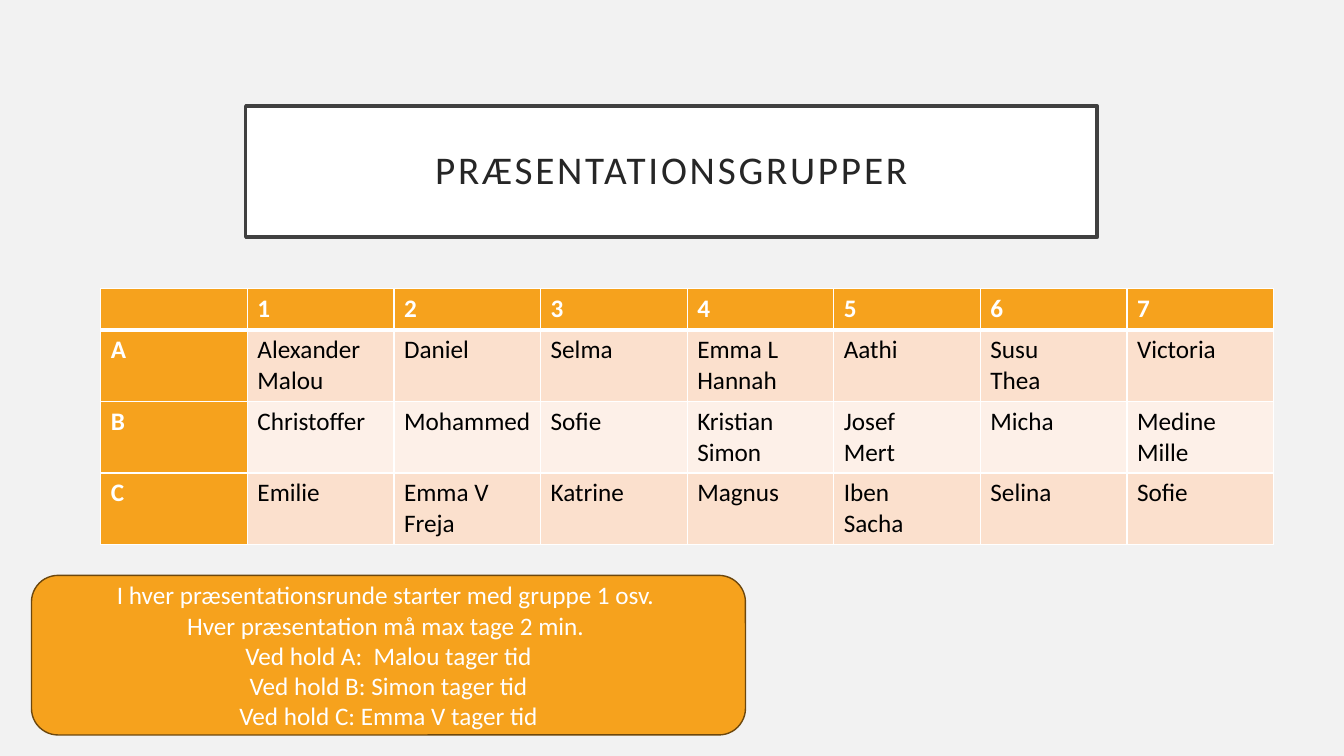
from collections import namedtuple

from lxml.etree import SubElement
from pptx import Presentation
from pptx.dml.color import RGBColor
from pptx.enum.shapes import MSO_SHAPE
from pptx.enum.text import MSO_ANCHOR, MSO_AUTO_SIZE, PP_ALIGN
from pptx.oxml.ns import qn
from pptx.util import Emu, Pt

Box = namedtuple("Box", "left top width height")

FONT = "Calibri"
BACKGROUND = RGBColor(0xF2, 0xF2, 0xF2)
WHITE = RGBColor(0xFF, 0xFF, 0xFF)
BLACK = RGBColor(0x00, 0x00, 0x00)
TITLE_TEXT = RGBColor(0x26, 0x26, 0x26)
TITLE_LINE = RGBColor(0x40, 0x40, 0x40)
ORANGE = RGBColor(0xF6, 0xA2, 0x1D)
NOTE_LINE = RGBColor(0x6C, 0x47, 0x0D)
BANDS = (RGBColor(0xFB, 0xE0, 0xCD), RGBColor(0xFD, 0xF0, 0xE8))

HEADER_HEIGHT = 39
GROUPS = [
    ["", "1", "2", "3", "4", "5", "6", "7"],
    ["A", "Alexander\nMalou", "Daniel", "Selma", "Emma L\nHannah", "Aathi", "Susu\nThea", "Victoria"],
    ["B", "Christoffer", "Mohammed", "Sofie", "Kristian\nSimon", "Josef\nMert", "Micha", "Medine\nMille"],
    ["C", "Emilie", "Emma V\nFreja", "Katrine", "Magnus", "Iben\nSacha", "Selina", "Sofie"],
]
RULES = [
    "I hver præsentationsrunde starter med gruppe 1 osv. ",
    "Hver præsentation må max tage 2 min. ",
    "Ved hold A:  Malou tager tid",
    "Ved hold B: Simon tager tid",
    "Ved hold C: Emma V tager tid",
]


def px(length):
    return Emu(round(length * 9525))


def place(shape, box):
    shape.left, shape.top, shape.width, shape.height = map(px, box)


def paint(shape, fill, line, line_width):
    shape.fill.solid()
    shape.fill.fore_color.rgb = fill
    shape.line.color.rgb = line
    shape.line.width = Pt(line_width)


def write_lines(text_frame, lines, color, size=18, bold=False, alignment=PP_ALIGN.LEFT):
    """Write each line as a paragraph with one run."""
    for index, line in enumerate(lines):
        paragraph = text_frame.add_paragraph() if index else text_frame.paragraphs[0]
        paragraph.alignment = alignment
        run = paragraph.add_run()
        run.text = line
        run.font.name = FONT
        run.font.size = Pt(size)
        run.font.bold = bold
        run.font.color.rgb = color


def add_title(slide, box):
    title = slide.shapes.title
    place(title, box)
    paint(title, WHITE, TITLE_LINE, 2.5)
    frame = title.text_frame
    frame.word_wrap = True
    frame.auto_size = MSO_AUTO_SIZE.NONE
    frame.vertical_anchor = MSO_ANCHOR.MIDDLE
    frame.margin_left = frame.margin_right = frame.margin_top = frame.margin_bottom = px(19)
    write_lines(frame, ["PRÆSENTATIONSGRUPPER"], TITLE_TEXT, 28, alignment=PP_ALIGN.CENTER)
    paragraph = frame.paragraphs[0]
    paragraph.line_spacing = 0.9
    paragraph.runs[0].font._element.set("spc", "200")


def add_cell_borders(cell, top, bottom):
    """Draw white borders, with the top and bottom widths given in points."""
    properties = cell._tc.get_or_add_tcPr()
    for side, width in (("L", 1), ("R", 1), ("T", top), ("B", bottom)):
        line = SubElement(properties, qn(f"a:ln{side}"), w=str(Pt(width)))
        fill = SubElement(line, qn("a:solidFill"))
        SubElement(fill, qn("a:srgbClr"), val=str(WHITE))


def add_group_table(slide, box):
    row_count, column_count = len(GROUPS), len(GROUPS[0])
    table = slide.shapes.add_table(row_count, column_count, *map(px, box)).table
    for column in table.columns:
        column.width = px(box.width / column_count)
    body_height = (box.height - HEADER_HEIGHT) / (row_count - 1)
    for row_index, names in enumerate(GROUPS):
        table.rows[row_index].height = px(body_height if row_index else HEADER_HEIGHT)
        for column_index, text in enumerate(names):
            cell = table.cell(row_index, column_index)
            heading = row_index == 0 or column_index == 0
            add_cell_borders(cell, 3 if row_index == 1 else 1, 3 if row_index == 0 else 1)
            cell.fill.solid()
            cell.fill.fore_color.rgb = ORANGE if heading else BANDS[(row_index - 1) % 2]
            if text:
                write_lines(cell.text_frame, text.split("\n"), WHITE if heading else BLACK, bold=heading)


def add_rules_note(slide, box):
    note = slide.shapes.add_shape(MSO_SHAPE.ROUNDED_RECTANGLE, *map(px, box))
    note.shadow.inherit = False
    paint(note, ORANGE, NOTE_LINE, 1)
    note.text_frame.word_wrap = True
    note.text_frame.vertical_anchor = MSO_ANCHOR.MIDDLE
    write_lines(note.text_frame, RULES, WHITE, alignment=PP_ALIGN.CENTER)


def main():
    presentation = Presentation()
    presentation.slide_width, presentation.slide_height = px(1280), px(720)
    slide = presentation.slides.add_slide(presentation.slide_layouts[5])
    slide.background.fill.solid()
    slide.background.fill.fore_color.rgb = BACKGROUND
    add_title(slide, Box(234, 101, 811, 125))
    add_group_table(slide, Box(96, 275, 1117, 243))
    add_rules_note(slide, Box(30, 548, 680, 152))
    presentation.save("out.pptx")


if __name__ == "__main__":
    main()
